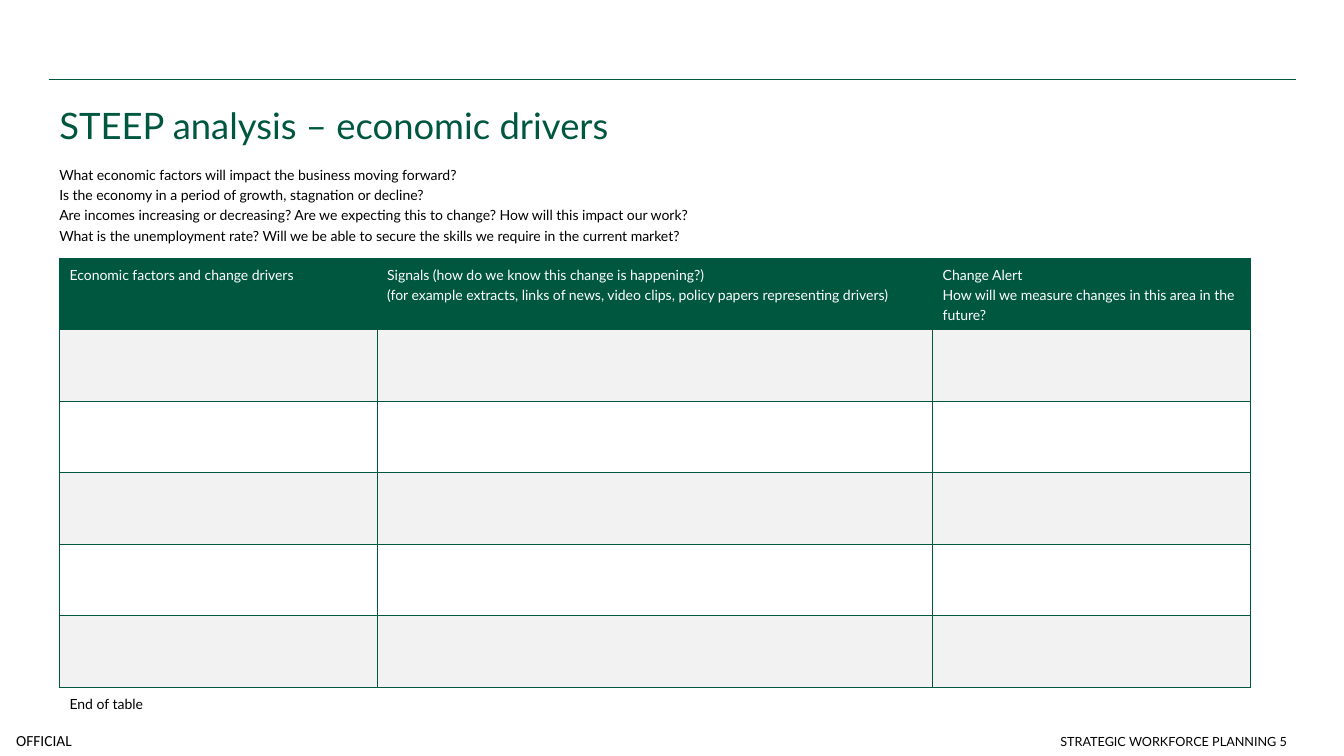
from dataclasses import dataclass

from lxml import etree
from pptx import Presentation
from pptx.dml.color import RGBColor
from pptx.enum.shapes import MSO_CONNECTOR
from pptx.enum.text import MSO_ANCHOR, PP_ALIGN
from pptx.oxml.ns import qn
from pptx.util import Emu, Pt

STRAIGHT = MSO_CONNECTOR.STRAIGHT
LEFT, RIGHT = PP_ALIGN.LEFT, PP_ALIGN.RIGHT
TOP, MIDDLE, BOTTOM = MSO_ANCHOR.TOP, MSO_ANCHOR.MIDDLE, MSO_ANCHOR.BOTTOM
EMU_PER_PX = 9144


@dataclass(frozen=True)
class Theme:
    """Colours, fonts and type sizes of the slide."""
    green: str = "00573F"
    band: str = "F2F2F2"
    white: str = "FFFFFF"
    black: str = "000000"
    font: str = "Lato"
    marking_font: str = "Calibri"
    title: int = 26
    body: int = 10
    marking: int = 11
    footer: int = 9
    rule: float = 1
    border: float = 0.5
    spacing: float = 1.2


THEME = Theme()
QUESTIONS = (
    "What economic factors will impact the business\u00a0moving forward?",
    "Is the economy in a period of growth, stagnation or decline?",
    "Are incomes increasing or decreasing? Are we expecting this to change? How will this impact our work?",
    "What is the unemployment rate? Will we be able to secure the skills we require in the current market?",
)
HEADINGS = (
    ("Economic factors and change drivers",),
    ("Signals (how do we know this change is happening?)",
     "(for example extracts, links of news, video clips, policy papers representing drivers)"),
    ("Change Alert", "How will we measure changes in this area in the future?"),
)
COLUMNS = (315, 551, 315)
ROW_HEIGHT, END_HEIGHT, BLANK_ROWS = 71, 39, 5


def px(n):
    """Turn px into EMU."""
    return Emu(n * EMU_PER_PX)


def write(tf, lines, size=THEME.body, color=THEME.black, font=THEME.font,
          align=LEFT, spacing=THEME.spacing):
    """Fill a text frame with one paragraph per line."""
    tf.word_wrap = True
    for i, line in enumerate(lines):
        p = tf.paragraphs[0] if i == 0 else tf.add_paragraph()
        p.alignment = align
        p.line_spacing = spacing
        r = p.add_run()
        r.text = line
        r.font.size = Pt(size)
        r.font.name = font
        r.font.bold = False
        r.font.color.rgb = RGBColor.from_string(color)


def add_text(slide, box, lines, anchor=TOP, **fmt):
    """Add a text box and return its text frame."""
    tf = slide.shapes.add_textbox(*map(px, box)).text_frame
    tf.vertical_anchor = anchor
    write(tf, lines, **fmt)
    return tf


def set_borders(cell, shown):
    """Draw the named sides of a cell and hide the others."""
    tc_pr = cell._tc.get_or_add_tcPr()
    for side in "LRTB":
        ln = etree.SubElement(tc_pr, qn(f"a:ln{side}"), w=str(Pt(THEME.border)))
        if side in shown:
            fill = etree.SubElement(ln, qn("a:solidFill"))
            etree.SubElement(fill, qn("a:srgbClr"), val=THEME.green)
        else:
            etree.SubElement(ln, qn("a:noFill"))


def add_header(slide, left, top, width):
    """Draw the rule, the title and the guiding questions."""
    rule = slide.shapes.add_connector(
        STRAIGHT, px(left), px(top), px(left + width), px(top))
    rule.line.color.rgb = RGBColor.from_string(THEME.green)
    rule.line.width = Pt(THEME.rule)
    etree.SubElement(rule._element.spPr, qn("a:effectLst"))
    add_text(slide, (left, top + 10, width, 102), ["STEEP analysis – economic drivers"],
             size=THEME.title, color=THEME.green)
    add_text(slide, (left, top + 78, width, 98), QUESTIONS)


def add_drivers_table(slide, left, top):
    """Draw the table of drivers with its closing row."""
    blank = [("",)] * len(COLUMNS)
    rows = [HEADINGS] + [blank] * BLANK_ROWS + [[("End of table",), ("",), ("",)]]
    heights = [ROW_HEIGHT] * (BLANK_ROWS + 1) + [END_HEIGHT]
    last = len(rows) - 1
    table = slide.shapes.add_table(
        len(rows), len(COLUMNS), px(left), px(top),
        px(sum(COLUMNS)), px(sum(heights))).table
    table.horz_banding = False
    for column, width in zip(table.columns, COLUMNS):
        column.width = px(width)
    for i, (texts, height) in enumerate(zip(rows, heights)):
        table.rows[i].height = px(height)
        fill = THEME.green if i == 0 else THEME.band if i % 2 else THEME.white
        for j, lines in enumerate(texts):
            cell = table.cell(i, j)
            write(cell.text_frame, lines, color=THEME.white if i == 0 else THEME.black)
            set_borders(cell, "T" if i == last else "LRTB")
            cell.fill.solid()
            cell.fill.fore_color.rgb = RGBColor.from_string(fill)


def add_footer(slide, right, bottom):
    """Place the marking at the left and the running title at the right."""
    tf = add_text(slide, (0, bottom - 31, 87, 31), ["OFFICIAL"], anchor=MIDDLE,
                  size=THEME.marking, font=THEME.marking_font, spacing=1)
    tf.margin_left = px(16)
    tf.margin_top = tf.margin_right = tf.margin_bottom = 0
    add_text(slide, (right - 602, bottom - 41, 602, 39), ["STRATEGIC WORKFORCE PLANNING 5"],
             anchor=BOTTOM, size=THEME.footer, align=RIGHT, spacing=1)


def main():
    """Build the slide and save it."""
    prs = Presentation()
    prs.slide_width, prs.slide_height = px(1333), px(750)
    slide = prs.slides.add_slide(prs.slide_layouts[6])
    add_header(slide, 49, 79, 1236)
    add_drivers_table(slide, 59, 256)
    add_footer(slide, 1286, 750)
    prs.save("out.pptx")


if __name__ == "__main__":
    main()
